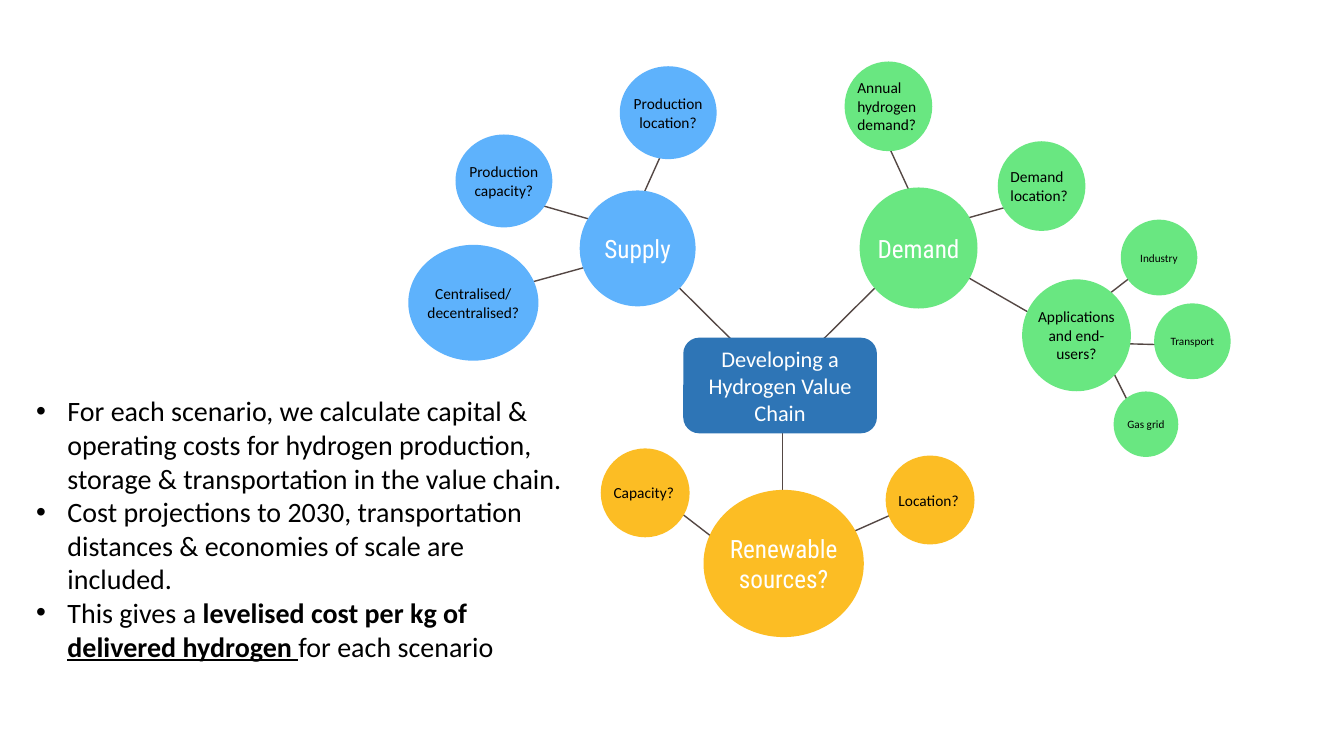
from lxml.etree import SubElement
from pptx import Presentation
from pptx.dml.color import RGBColor
from pptx.enum.shapes import MSO_CONNECTOR, MSO_SHAPE
from pptx.enum.text import MSO_ANCHOR, PP_ALIGN
from pptx.oxml.ns import qn
from pptx.util import Cm, Pt

COLORS = {
    "supply": "5EB2FC",
    "demand": "69E781",
    "renewables": "FCBD24",
    "hub": "2E75B6",
    "line": "544744",
    "black": "000000",
    "white": "FFFFFF",
}

TITLE = {"size": 18, "font": "Roboto Condensed", "color": "white"}
TOPIC = {"size": 11}
LEFT_TOPIC = {"size": 11, "align": PP_ALIGN.LEFT}
SMALL = {"size": 8}

ELLIPSE_INSET = 0.15
TEXT_MARGIN = Cm(0.33)

LINKS = [
    (28.77, 10.81, 27.9, 9.07),
    (15.09, 6.64, 13.21, 7.16),
    (13.21, 5.05, 15.09, 5.59),
    (16.89, 3.39, 16.09, 5.17),
    (16.5, 6.64, 18.96, 9.08),
    (19.72, 9.78, 19.72, 13.23),
    (18.5, 13.96, 16.62, 12.51),
    (22.89, 12.78, 21.09, 13.58),
    (29.46, 8.69, 27.52, 8.64),
    (28.94, 6.64, 27.39, 7.84),
    (24.27, 6.92, 27.5, 8.78),
    (25.96, 5.05, 24.08, 5.58),
    (22.26, 3.39, 23.08, 5.17),
    (22.67, 6.64, 20.21, 9.08),
]

BUBBLES = [
    ("Supply", "supply", 16.07, 6.26, 2.92, 2.92, TITLE),
    ("Production location?", "supply", 16.84, 2.84, 2.44, 2.34, TOPIC),
    ("Production capacity?", "supply", 12.7, 4.56, 2.44, 2.34, TOPIC),
    ("Centralised/ decentralised?", "supply", 11.93, 7.63, 3.28, 2.92, TOPIC),
    ("Renewable sources?", "renewables", 19.75, 14.2, 4.04, 3.71, TITLE),
    ("Location?", "renewables", 23.44, 12.6, 2.24, 2.24, LEFT_TOPIC),
    ("Capacity?", "renewables", 16.26, 12.42, 2.24, 2.24, LEFT_TOPIC),
    ("Demand", "demand", 23.15, 6.25, 2.97, 3.05, TITLE),
    ("Applications and end-users?", "demand", 27.13, 8.45, 2.74, 2.82, TOPIC),
    ("Annual hydrogen demand?", "demand", 22.39, 2.68, 2.21, 2.26, LEFT_TOPIC),
    ("Demand location?", "demand", 26.25, 4.69, 2.21, 2.26, LEFT_TOPIC),
    ("Transport", "demand", 30.05, 8.6, 1.93, 1.91, SMALL),
    ("Industry", "demand", 29.21, 6.49, 1.93, 1.91, SMALL),
    ("Gas grid", "demand", 28.88, 10.69, 1.63, 1.65, SMALL),
]

FINDINGS = [
    [("For each scenario, we calculate capital & operating costs for hydrogen "
      "production, storage & transportation in the value chain.", {})],
    [("Cost projections to 2030, transportation distances & economies of scale "
      "are included.", {})],
    [("This gives a ", {}),
     ("levelised cost per kg of ", {"bold": True}),
     ("delivered hydrogen", {"bold": True, "underline": True}),
     (" ", {"underline": True}),
     ("for each scenario", {})],
]


def rgb(name):
    return RGBColor.from_string(COLORS[name])


def add_text(paragraph, text, size=11, font="Calibri", color="black",
             align=PP_ALIGN.CENTER, bold=False, underline=False):
    paragraph.alignment = align
    run = paragraph.add_run()
    run.text = text
    run.font.size = Pt(size)
    run.font.name = font
    run.font.color.rgb = rgb(color)
    run.font.bold = bold
    run.font.underline = underline


def add_link(slide, x1, y1, x2, y2):
    connector = slide.shapes.add_connector(
        MSO_CONNECTOR.STRAIGHT, Cm(x1), Cm(y1), Cm(x2), Cm(y2))
    connector.line.color.rgb = rgb("line")
    connector.line.width = Pt(1)
    SubElement(connector._element.spPr, qn("a:effectLst"))


def add_node(slide, kind, text, fill, left, top, width, height, **text_format):
    shape = slide.shapes.add_shape(kind, Cm(left), Cm(top), Cm(width), Cm(height))
    shape.shadow.inherit = False
    shape.fill.solid()
    shape.fill.fore_color.rgb = rgb(fill)
    shape.line.fill.background()
    frame = shape.text_frame
    frame.word_wrap = True
    frame.vertical_anchor = MSO_ANCHOR.MIDDLE
    add_text(frame.paragraphs[0], text, **text_format)
    return shape


def add_bubble(slide, text, fill, center_x, center_y, width, height, text_format):
    shape = add_node(slide, MSO_SHAPE.OVAL, text, fill, center_x - width / 2,
                     center_y - height / 2, width, height, **text_format)
    frame = shape.text_frame
    side = int(TEXT_MARGIN - ELLIPSE_INSET * shape.width)
    frame.margin_left = frame.margin_right = side
    frame.margin_top = frame.margin_bottom = 0


def add_bullet(paragraph):
    properties = paragraph._p.get_or_add_pPr()
    properties.set("marL", str(Cm(0.79)))
    properties.set("indent", str(-Cm(0.79)))
    SubElement(properties, qn("a:buFont")).set("typeface", "Arial")
    SubElement(properties, qn("a:buChar")).set("char", "•")


def add_findings(slide):
    box = slide.shapes.add_textbox(Cm(0.66), Cm(9.8), Cm(13.84), Cm(7.09))
    frame = box.text_frame
    frame.word_wrap = True
    for index, runs in enumerate(FINDINGS):
        paragraph = frame.add_paragraph() if index else frame.paragraphs[0]
        add_bullet(paragraph)
        for text, emphasis in runs:
            add_text(paragraph, text, size=20, align=PP_ALIGN.LEFT, **emphasis)


def main():
    presentation = Presentation()
    presentation.slide_width = Cm(33.87)
    presentation.slide_height = Cm(19.05)
    slide = presentation.slides.add_slide(presentation.slide_layouts[6])
    for link in LINKS:
        add_link(slide, *link)
    for bubble in BUBBLES:
        add_bubble(slide, *bubble)
    add_node(slide, MSO_SHAPE.ROUNDED_RECTANGLE, "Developing a Hydrogen Value Chain",
             "hub", 17.22, 8.51, 4.88, 2.41, size=16, color="white")
    add_findings(slide)
    presentation.save("out.pptx")


if __name__ == "__main__":
    main()
